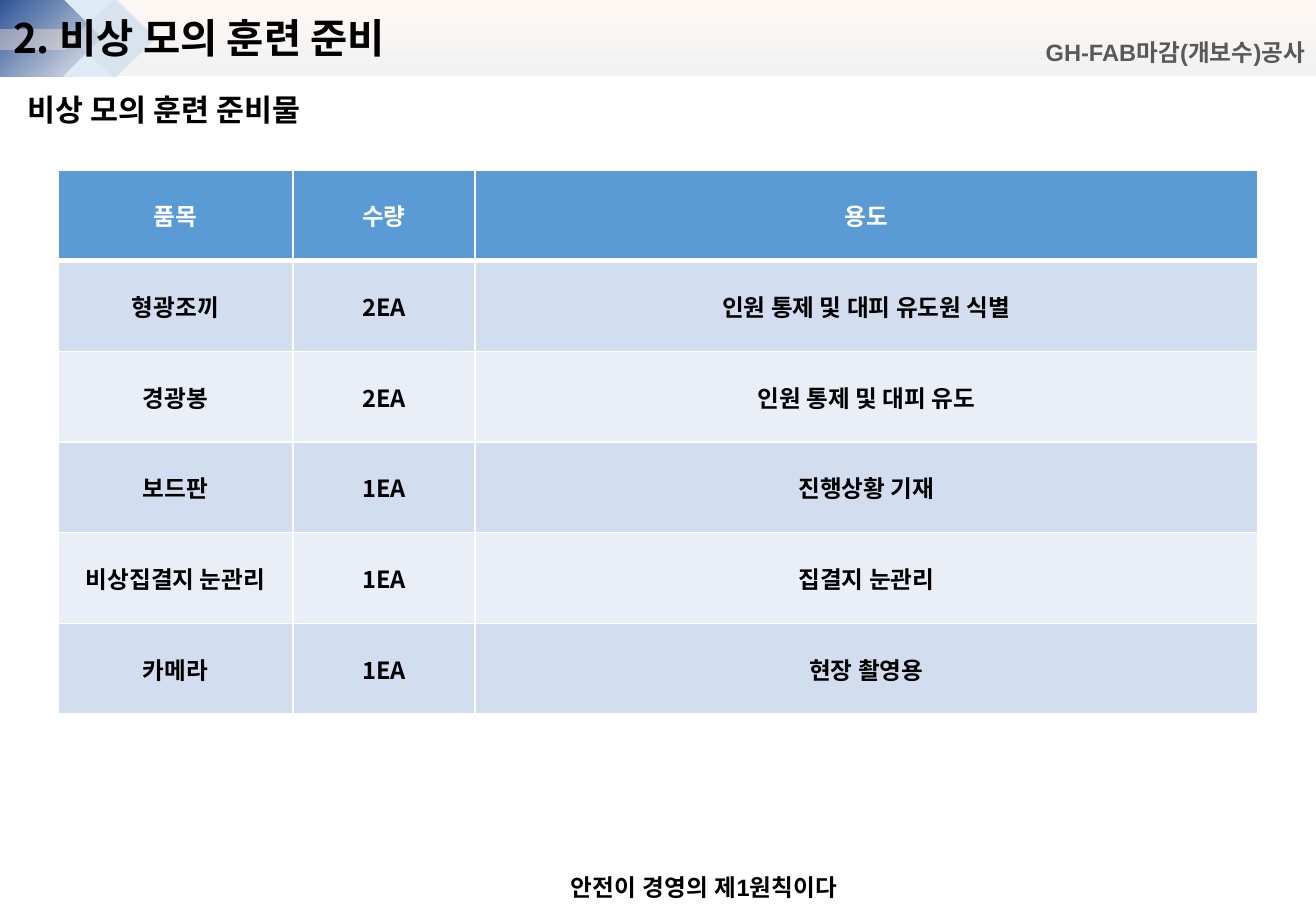
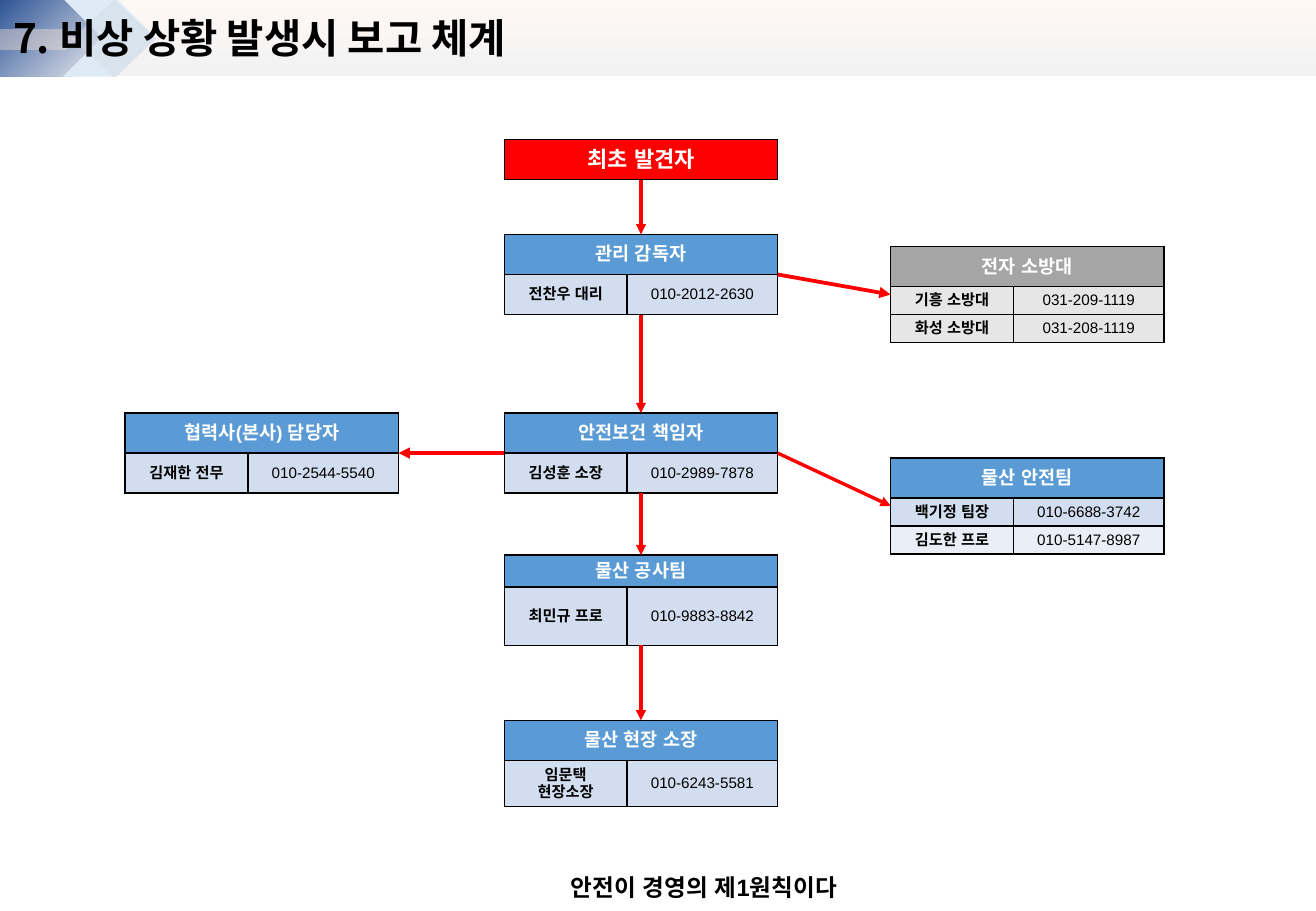
from lxml import etree
from pptx import Presentation
from pptx.dml.color import RGBColor
from pptx.enum.shapes import MSO_CONNECTOR, MSO_SHAPE
from pptx.enum.text import MSO_ANCHOR, PP_ALIGN
from pptx.oxml.ns import qn
from pptx.util import Inches, Pt

RECT, PLATE = MSO_SHAPE.RECTANGLE, MSO_SHAPE.PENTAGON
CHEVRON, DIAMOND = MSO_SHAPE.CHEVRON, MSO_SHAPE.DIAMOND
STRAIGHT = MSO_CONNECTOR.STRAIGHT
LEFT, CENTER, RIGHT = PP_ALIGN.LEFT, PP_ALIGN.CENTER, PP_ALIGN.RIGHT
MIDDLE = MSO_ANCHOR.MIDDLE

COLORS = {
    "black": "000000", "white": "FFFFFF", "red": "FF0000", "muted": "595959",
    "blue": "5B9BD5", "band": "D2DEEF", "pale": "EAEFF7",
    "gray": "A5A5A5", "light": "E7E6E6",
    "cream": "FEF8F5", "mist": "F2F2F2", "navy": "2F5597",
    "ice": "DEEBF7", "steel": "D6DCE5", "peach": "FBE5D6",
}
SANS, KOREAN = "Arial", "Noto Sans CJK KR"
WIDTH, HEIGHT, BAND = 10.83, 7.5, 0.63

BAND_PARTS = [
    (RECT, (0, 0, WIDTH, BAND), ("cream", "mist"), None),
    (PLATE, (0, 0, 0.91, BAND), ("mist", "navy"), None),
    (CHEVRON, (0.52, -0.01, 0.76, 0.64), "ice", None),
    (DIAMOND, (0.59, 0, 0.7, 0.64), "steel", 51),
    (PLATE, (0, 0.24, 0.63, 0.17), "peach", 41),
]
FOOTER = "안전이 경영의 제1원칙이다"

SUPPLIES_TITLE = "2. 비상 모의 훈련 준비"
SUPPLIES_HEADING = "비상 모의 훈련 준비물"
PROJECT = "GH-FAB마감(개보수)공사"
SUPPLIES = [
    ("품목", "수량", "용도"),
    ("형광조끼", "2EA", "인원 통제 및 대피 유도원 식별"),
    ("경광봉", "2EA", "인원 통제 및 대피 유도"),
    ("보드판", "1EA", "진행상황 기재"),
    ("비상집결지 눈관리", "1EA", "집결지 눈관리"),
    ("카메라", "1EA", "현장 촬영용"),
]

REPORT_TITLE = "7. 비상 상황 발생시 보고 체계"
CARD_WIDTH, NAME_WIDTH = 2.25, 1.01
PARTNER_X, CHAIN_X, TEAM_X = 1.03, 4.15, 7.33
BLUE_FILLS = ("blue", "band", "pale")
GRAY_FILLS = ("gray", "light", "light")
CARDS = {
    "finder": (CHAIN_X, 1.15, [0.33], ("red",), "최초 발견자", []),
    "supervisor": (CHAIN_X, 1.93, [0.33, 0.33], BLUE_FILLS, "관리 감독자",
                   [("전찬우 대리", "010-2012-2630")]),
    "safety": (CHAIN_X, 3.4, [0.33, 0.33], BLUE_FILLS, "안전보건 책임자",
               [("김성훈 소장", "010-2989-7878")]),
    "works": (CHAIN_X, 4.57, [0.26, 0.48], BLUE_FILLS, "물산 공사팀",
              [("최민규 프로", "010-9883-8842")]),
    "manager": (CHAIN_X, 5.93, [0.33, 0.38], BLUE_FILLS, "물산 현장 소장",
                [("임문택\n현장소장", "010-6243-5581")]),
    "partner": (PARTNER_X, 3.4, [0.33, 0.33], BLUE_FILLS, "협력사(본사) 담당자",
                [("김재한 전무", "010-2544-5540")]),
    "safety_team": (TEAM_X, 3.77, [0.33, 0.23, 0.23], BLUE_FILLS, "물산 안전팀",
                    [("백기정 팀장", "010-6688-3742"),
                     ("김도한 프로", "010-5147-8987")]),
    "fire_team": (TEAM_X, 2.03, [0.33, 0.23, 0.23], GRAY_FILLS, "전자 소방대",
                  [("기흥 소방대", "031-209-1119"),
                   ("화성 소방대", "031-208-1119")]),
}
LINKS = [
    ("finder", "supervisor", 2), ("supervisor", "safety", 2),
    ("safety", "works", 2), ("works", "manager", 2),
    ("supervisor", "fire_team", 2.25), ("safety", "safety_team", 2),
    ("safety", "partner", 2.25),
]


def color(name):
    return RGBColor.from_string(COLORS[name])


def write(frame, text, size, tint, font=SANS, bold=True, align=LEFT, after=None):
    for index, line in enumerate(text.split("\n")):
        para = frame.add_paragraph() if index else frame.paragraphs[0]
        para.alignment = align
        if after is not None:
            para.space_after = Pt(after)
        span = para.add_run()
        span.text = line
        for key, value in {"name": font, "size": Pt(size), "bold": bold}.items():
            setattr(span.font, key, value)
        span.font.color.rgb = color(tint)
        latin = span.font._element.find(qn("a:latin"))
        east = etree.Element(qn("a:ea"), typeface=font)
        latin.addnext(east)


def add_text(page, place, text, size, tint="black", wrap=True, **style):
    box = page.shapes.add_textbox(*map(Inches, place))
    box.text_frame.word_wrap = wrap
    write(box.text_frame, text, size, tint, **style)


def add_band_part(page, kind, place, fill, opacity):
    shape = page.shapes.add_shape(kind, *map(Inches, place))
    shape.shadow.inherit = False
    shape.line.fill.background()
    if isinstance(fill, str):
        shape.fill.solid()
        shape.fill.fore_color.rgb = color(fill)
        if opacity:
            tone = shape._element.spPr.find(".//" + qn("a:srgbClr"))
            etree.SubElement(tone, qn("a:alpha"), val=str(opacity * 1000))
        return
    shape.fill.gradient()
    shape.fill.gradient_angle = 270
    for stop, name, position in zip(shape.fill.gradient_stops, fill, (0, 1)):
        stop.color.rgb = color(name)
        stop.position = position
    if kind == PLATE:
        linear = shape._element.spPr.find(".//" + qn("a:lin"))
        radial = etree.Element(qn("a:path"), path="circle")
        etree.SubElement(radial, qn("a:fillToRect"), l="100000", t="100000")
        linear.getparent().replace(linear, radial)


def add_page(deck, title):
    page = deck.slides.add_slide(deck.slide_layouts[6])
    for part in BAND_PARTS:
        add_band_part(page, *part)
    add_text(page, (4.38, 7.14, 2.61, 0.34), FOOTER, 14, wrap=False, align=RIGHT)
    add_text(page, (0.01, 0.06, 7.2, 0.51), title, 24, font=KOREAN)
    return page


def add_grid(page, left, top, widths, heights):
    frame = page.shapes.add_table(
        len(heights), len(widths), Inches(left), Inches(top),
        Inches(sum(widths)), Inches(sum(heights)))
    table = frame.table
    table.first_row = table.horz_banding = False
    for column, width in zip(table.columns, widths):
        column.width = Inches(width)
    for row, height in zip(table.rows, heights):
        row.height = Inches(height)
    return table


def style_cell(cell, fill, border, widths, margins=None):
    cell.vertical_anchor = MIDDLE
    cell.fill.solid()
    cell.fill.fore_color.rgb = color(fill)
    if margins:
        cell.margin_left = cell.margin_right = Inches(margins[0])
        cell.margin_top = cell.margin_bottom = Inches(margins[1])
    properties = cell._tc.get_or_add_tcPr()
    for index, (side, width) in enumerate(zip("LRTB", widths)):
        line = etree.Element(qn("a:ln" + side), w=str(Pt(width)))
        solid = etree.SubElement(line, qn("a:solidFill"))
        etree.SubElement(solid, qn("a:srgbClr"), val=COLORS[border])
        properties.insert(index, line)


def add_supplies(page):
    rows = len(SUPPLIES)
    table = add_grid(page, 0.48, 1.4, [1.93, 1.5, 6.44], [4.48 / rows] * rows)
    for r, values in enumerate(SUPPLIES):
        fill = "blue" if r == 0 else ("pale", "band")[r % 2]
        widths = (1, 1, 3 if r == 1 else 1, 3 if r == 0 else 1)
        for c, value in enumerate(values):
            cell = table.cell(r, c)
            style_cell(cell, fill, "white", widths)
            write(cell.text_frame, value, 14, "black" if r else "white",
                  font=KOREAN, align=CENTER)


def add_card(page, left, top, heights, fills, heading, contacts):
    widths = [NAME_WIDTH, CARD_WIDTH - NAME_WIDTH] if contacts else [CARD_WIDTH]
    table = add_grid(page, left, top, widths, heights)
    for r, fill in enumerate(fills[:len(heights)]):
        for c in range(len(widths)):
            style_cell(table.cell(r, c), fill, "black", (1, 1, 1, 1), (0.08, 0.04))
    header = table.cell(0, 0)
    if contacts:
        header.merge(table.cell(0, 1))
    write(header.text_frame, heading, 11 if contacts else 13, "white", align=CENTER)
    for r, contact in enumerate(contacts, 1):
        for c, value in enumerate(contact):
            write(table.cell(r, c).text_frame, value, 9, "black",
                  bold=c == 0, align=CENTER)


def add_link(page, source, target, width):
    (x1, y1, rows1), (x2, y2, rows2) = CARDS[source][:3], CARDS[target][:3]
    height1, height2 = sum(rows1), sum(rows2)
    if x1 == x2:
        middle = x1 + CARD_WIDTH / 2
        ends = (middle, y1 + height1, middle, y2)
    else:
        start, end = (x1 + CARD_WIDTH, x2) if x2 > x1 else (x1, x2 + CARD_WIDTH)
        ends = (start, y1 + height1 / 2, end, y2 + height2 / 2)
    arrow = page.shapes.add_connector(STRAIGHT, *map(Inches, ends))
    arrow.line.color.rgb = color("red")
    arrow.line.width = Pt(width)
    etree.SubElement(arrow.line._get_or_add_ln(), qn("a:tailEnd"), type="triangle")
    etree.SubElement(arrow._element.spPr, qn("a:effectLst"))


def main():
    deck = Presentation()
    deck.slide_width, deck.slide_height = Inches(WIDTH), Inches(HEIGHT)

    page = add_page(deck, SUPPLIES_TITLE)
    add_supplies(page)
    add_text(page, (0.13, 0.7, 10.61, 0.35), SUPPLIES_HEADING, 18,
             font=KOREAN, after=9)
    add_text(page, (8.17, 0.26, 2.67, 0.34), PROJECT, 14, "muted", align=RIGHT)

    page = add_page(deck, REPORT_TITLE)
    for card in CARDS.values():
        add_card(page, *card)
    for link in LINKS:
        add_link(page, *link)

    deck.save("out.pptx")


if __name__ == "__main__":
    main()
